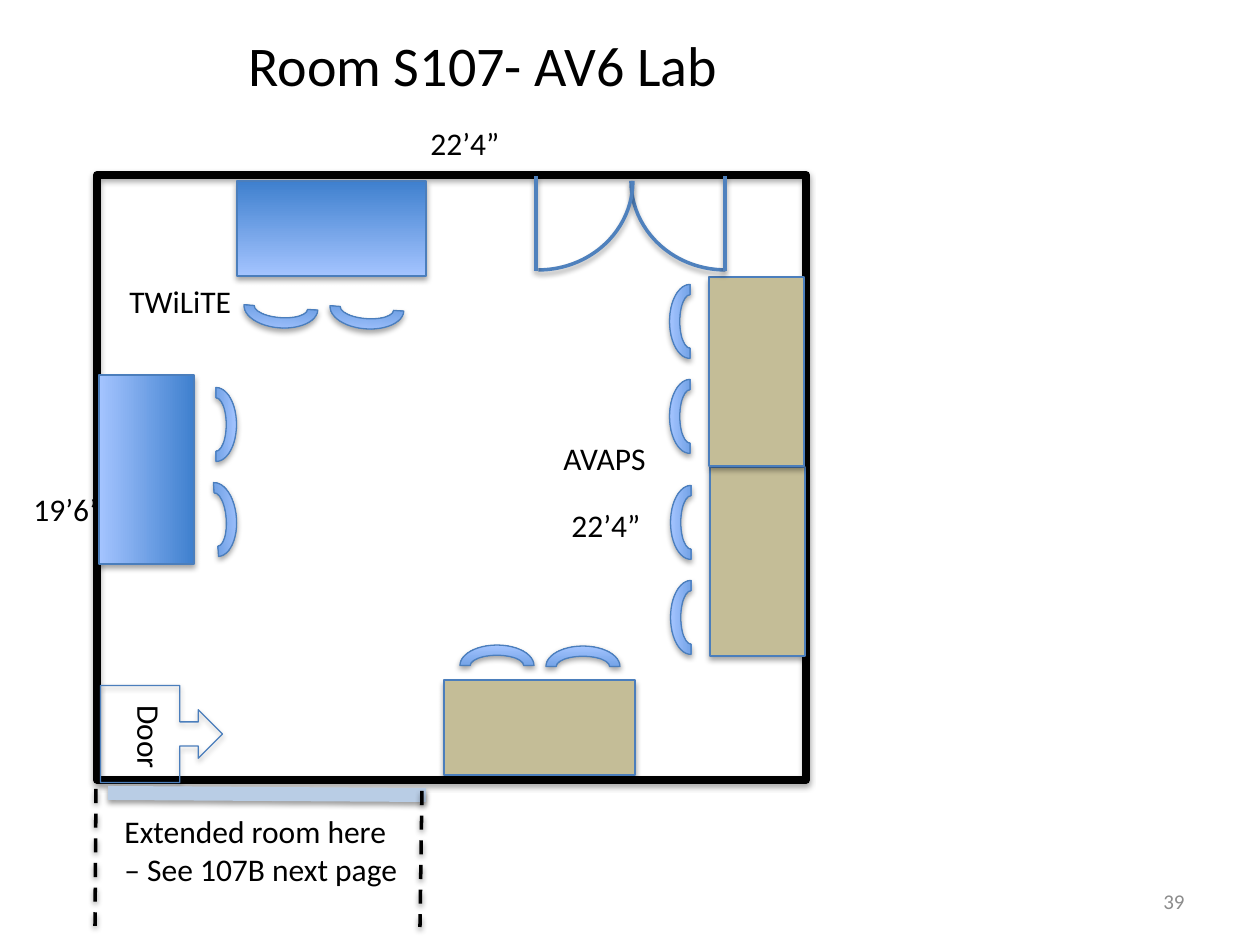
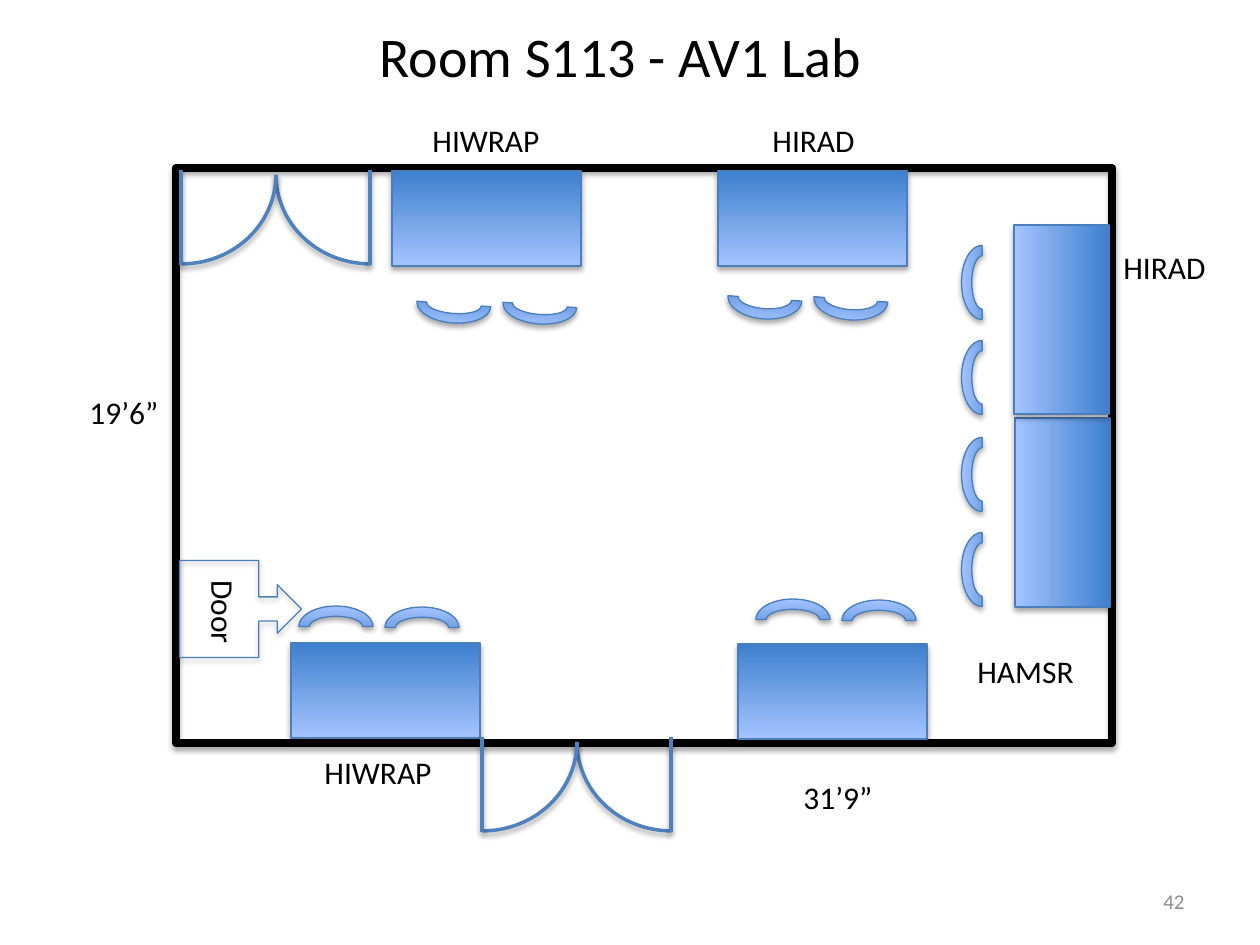
from lxml import etree
from pptx import Presentation
from pptx.dml.color import RGBColor
from pptx.enum.dml import MSO_LINE
from pptx.enum.shapes import MSO_CONNECTOR, MSO_SHAPE
from pptx.enum.text import MSO_ANCHOR as ANCHOR, MSO_AUTO_SIZE as AUTO_SIZE, PP_ALIGN as ALIGN
from pptx.oxml.ns import qn
from pptx.util import Emu, Pt

EMU_PER_PX = 914400 / 126
FONT = "Calibri"
BLACK = RGBColor(0x00, 0x00, 0x00)
GRAY = RGBColor(0x8C, 0x8C, 0x8C)
TAN = RGBColor(0xC4, 0xBD, 0x97)
DARK_BLUE = RGBColor(0x3F, 0x80, 0xCE)
LIGHT_BLUE = RGBColor(0xA4, 0xC4, 0xFF)
OUTLINE_BLUE = RGBColor(0x4B, 0x7E, 0xBC)
DOOR_BLUE = RGBColor(0x4F, 0x81, 0xBD)
OPENING_BLUE = RGBColor(0xB9, 0xCD, 0xE5)

DESK_LENGTH, DESK_DEPTH = 189, 95
CHAIR_WIDTH, CHAIR_HEIGHT = 74, 41
LEAF_WIDTH, LEAF_HEIGHT = 95, 95
CHAIR_POSES = {
    "up": (180, True),
    "down": (4.2, True),
    "left": (90, True),
    "right": (90, False),
}


def px(value):
    return Emu(round(value * EMU_PER_PX))


def box(*lengths):
    return [px(length) for length in lengths]


def add_shadow(shape, distance=23000, opacity=35000):
    properties = shape._element.spPr
    effects = properties.find(qn("a:effectLst"))
    if effects is None:
        effects = etree.SubElement(properties, qn("a:effectLst"))
    outer = etree.SubElement(effects, qn("a:outerShdw"), blurRad="40000",
                             dist=str(distance), dir="5400000", rotWithShape="0")
    color = etree.SubElement(outer, qn("a:srgbClr"), val="000000")
    etree.SubElement(color, qn("a:alpha"), val=str(opacity))


def flip(shape, horizontal=False, vertical=False):
    transform = shape._element.spPr.find(qn("a:xfrm"))
    if horizontal:
        transform.set("flipH", "1")
    if vertical:
        transform.set("flipV", "1")


def set_line(shape, color, width):
    shape.line.color.rgb = color
    shape.line.width = Pt(width)


def fill_gradient(shape):
    shape.fill.gradient()
    shape.fill.gradient_angle = 90
    for stop, color in zip(shape.fill.gradient_stops, (DARK_BLUE, LIGHT_BLUE)):
        stop.color.rgb = color


def add_outline(shapes, kind, bounds, color=OUTLINE_BLUE, width=0.75, rotation=0):
    shape = shapes.add_shape(kind, *box(*bounds))
    shape.rotation = rotation
    shape.shadow.inherit = False
    shape.fill.background()
    set_line(shape, color, width)
    add_shadow(shape)
    return shape


def add_line(shapes, start, end, color, width=2, dash=None):
    line = shapes.add_connector(MSO_CONNECTOR.STRAIGHT, *box(*start, *end))
    set_line(line, color, width)
    if dash:
        line.line.dash_style = dash
    add_shadow(line, 20000, 38000)


def add_text(slide, text, bounds, size=18, color=BLACK, align=ALIGN.LEFT,
             anchor=ANCHOR.TOP, wrap=True):
    shape = slide.shapes.add_textbox(*box(*bounds))
    frame = shape.text_frame
    frame.word_wrap = wrap
    frame.auto_size = AUTO_SIZE.NONE if wrap else AUTO_SIZE.SHAPE_TO_FIT_TEXT
    frame.vertical_anchor = anchor
    paragraph = frame.paragraphs[0]
    paragraph.alignment = align
    run = paragraph.add_run()
    run.text = text
    run.font.name = FONT
    run.font.size = Pt(size)
    run.font.color.rgb = color
    return shape


def add_label(slide, text, left, top, width):
    return add_text(slide, text, (left, top, width, 51), wrap=False)


def add_title(slide, text, bounds):
    add_text(slide, text, bounds, 32, align=ALIGN.CENTER, anchor=ANCHOR.MIDDLE)


def add_page_number(slide, number):
    add_text(slide, number, (903, 876, 294, 50), 12, GRAY, ALIGN.RIGHT, ANCHOR.MIDDLE)


def add_walls(slide, *bounds):
    add_outline(slide.shapes, MSO_SHAPE.RECTANGLE, bounds, BLACK, 4.5)


def add_desk(slide, left, top, upright=False, color=None, length=DESK_LENGTH):
    if upright:
        shift = (length - DESK_DEPTH) / 2
        left, top = left - shift, top + shift
    desk = add_outline(slide.shapes, MSO_SHAPE.RECTANGLE, (left, top, length, DESK_DEPTH),
                       rotation=270 if upright else 180)
    if color is None:
        fill_gradient(desk)
    else:
        desk.fill.solid()
        desk.fill.fore_color.rgb = color


def add_chairs(slide, left, top, facing, height=CHAIR_HEIGHT, second_turn=0):
    rotation, vertical = CHAIR_POSES[facing]
    step_x, step_y = (86, 1) if facing in ("up", "down") else (0, 95)
    for index in range(2):
        bounds = (left + index * step_x, top + index * step_y, CHAIR_WIDTH, height)
        chair = add_outline(slide.shapes, MSO_SHAPE.BLOCK_ARC, bounds,
                            rotation=rotation + index * second_turn)
        flip(chair, True, vertical)
        fill_gradient(chair)


def add_double_door(slide, left, top, left_arc_shift=0):
    shapes = slide.shapes.add_group_shape().shapes
    arc_size = (2 * LEAF_WIDTH - 1, 178)
    for arc_left, mirrored in ((left + LEAF_WIDTH, True),
                               (left - LEAF_WIDTH + 1 + left_arc_shift, False)):
        arc = add_outline(shapes, MSO_SHAPE.ARC, (arc_left, top - 84, *arc_size), DOOR_BLUE, 2)
        flip(arc, mirrored, True)
    for hinge in (left, left + 2 * LEAF_WIDTH - 1):
        add_line(shapes, (hinge, top + LEAF_HEIGHT), (hinge, top), DOOR_BLUE)


def add_entrance(slide, left, top, label_left):
    add_outline(slide.shapes, MSO_SHAPE.UP_ARROW_CALLOUT, (left, top, 97, 122), rotation=90)
    label = add_label(slide, "Door", label_left, top + 39, 89)
    label.rotation = 90


def build_av6_lab(slide):
    add_title(slide, "Room S107- AV6 Lab", (0, -13, 966, 154))
    add_walls(slide, 97, 175, 709, 605)
    add_chairs(slide, 460, 645, "up")
    add_desk(slide, 710, 467, upright=True, color=TAN)
    add_desk(slide, 709, 277, upright=True, color=TAN)
    add_chairs(slide, 653, 301, "left")
    add_chairs(slide, 654, 502, "left")
    add_label(slide, "19’6”", 21, 484, 95)
    add_label(slide, "22’4”", 418, 118, 95)
    add_desk(slide, 237, 181)
    add_chairs(slide, 244, 287, "down")
    add_desk(slide, 444, 680, color=TAN, length=191)
    add_label(slide, "22’4”", 559, 500, 95)
    add_desk(slide, 99, 375, upright=True)
    add_chairs(slide, 179, 404, "right", second_turn=-4)
    add_label(slide, "TWiLiTE", 117, 276, 129)
    add_label(slide, "AVAPS", 551, 433, 111)
    add_double_door(slide, 536, 176, left_arc_shift=2)
    add_entrance(slide, 113, 673, 105)
    add_line(slide.shapes, (108, 793), (426, 795), OPENING_BLUE, 8)
    add_text(slide, "Extended room here – See 107B next page", (112, 806, 306, 89))
    add_line(slide.shapes, (96, 789), (95, 926), BLACK, dash=MSO_LINE.DASH)
    add_line(slide.shapes, (422, 791), (420, 927), BLACK, dash=MSO_LINE.DASH)
    add_page_number(slide, "39")


def build_av1_lab(slide):
    add_title(slide, "Room S113 - AV1 Lab", (98, 1, 1045, 108))
    add_walls(slide, 176, 168, 936, 575)
    add_double_door(slide, 181, 170)
    add_label(slide, "HIWRAP", 312, 747, 134)
    add_label(slide, "19’6”", 77, 387, 95)
    add_label(slide, "31’9”", 791, 772, 95)
    add_chairs(slide, 299, 606, "up")
    add_desk(slide, 291, 643)
    add_chairs(slide, 756, 599, "up")
    add_desk(slide, 738, 644)
    add_label(slide, "HAMSR", 965, 646, 122)
    add_label(slide, "HIRAD", 760, 115, 108)
    add_desk(slide, 392, 171)
    add_chairs(slide, 417, 285, "down", height=38)
    add_desk(slide, 718, 171)
    add_chairs(slide, 728, 278, "down")
    add_entrance(slide, 192, 548, 179)
    add_double_door(slide, 482, 737)
    add_desk(slide, 1015, 418, upright=True)
    add_chairs(slide, 945, 454, "left")
    add_desk(slide, 1014, 225, upright=True)
    add_chairs(slide, 945, 262, "left")
    add_label(slide, "HIRAD", 1111, 242, 108)
    add_label(slide, "HIWRAP", 420, 115, 134)
    add_page_number(slide, "42")


def main():
    presentation = Presentation()
    presentation.slide_width, presentation.slide_height = box(1260, 945)
    blank = presentation.slide_layouts[6]
    for build in (build_av6_lab, build_av1_lab):
        build(presentation.slides.add_slide(blank))
    presentation.save("out.pptx")


if __name__ == "__main__":
    main()
